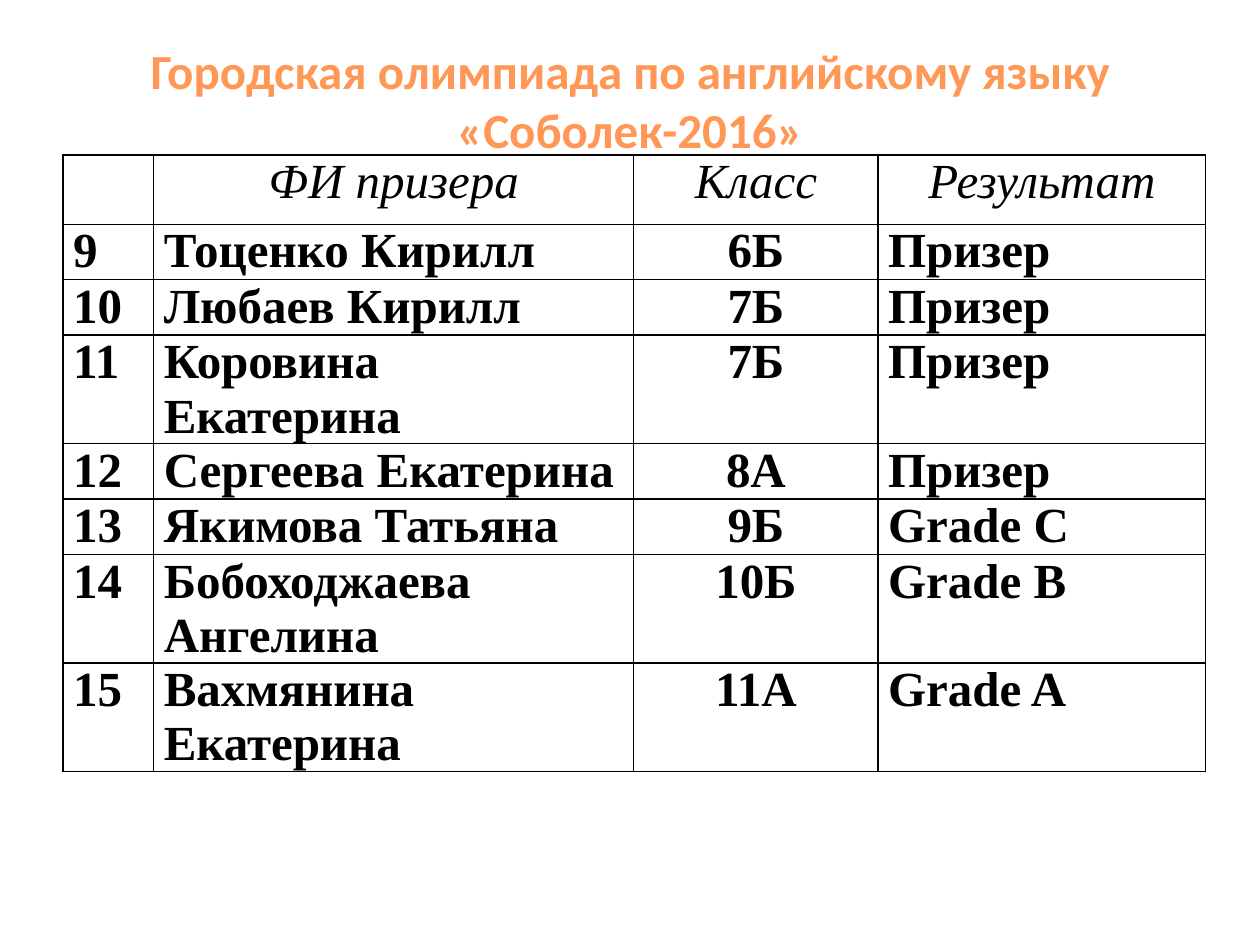
"""Builds the slide with the prize winners of the city English olympiad."""
from lxml.etree import SubElement
from pptx import Presentation
from pptx.dml.color import RGBColor
from pptx.enum.text import MSO_ANCHOR, MSO_AUTO_SIZE, PP_ALIGN
from pptx.oxml.ns import qn
from pptx.util import Inches, Pt

COLORS = {"title": "FF9856", "text": "000000", "border": "000000"}
FONTS = {"title": "Calibri", "table": "Times New Roman"}
TEXT_SIZE = 28

COLUMN_WIDTHS = [0.72, 3.81, 1.94, 2.6]
ROW_HEIGHTS = [0.55, 0.44, 0.44, 0.86, 0.44, 0.44, 0.86, 0.86]
HEADER = ["", "ФИ призера", "Класс", "Результат"]
WINNERS = [
    ("Тоценко Кирилл", "6Б", "Призер"),
    ("Любаев Кирилл", "7Б", "Призер"),
    ("Коровина Екатерина", "7Б", "Призер"),
    ("Сергеева Екатерина", "8А", "Призер"),
    ("Якимова Татьяна", "9Б", "Grade C"),
    ("Бобоходжаева Ангелина", "10Б", "Grade B"),
    ("Вахмянина Екатерина", "11А", "Grade A"),
]
FIRST_NUMBER = 9
CLASS_COLUMN = 2


def set_values(target, values):
    for name, value in values.items():
        setattr(target, name, value)


class SlideBuilder:
    def __init__(self, presentation):
        self.slide = presentation.slides.add_slide(presentation.slide_layouts[5])

    def format_paragraph(self, paragraph, alignment, color, **font_values):
        paragraph.alignment = alignment
        set_values(paragraph.font, {"size": Pt(TEXT_SIZE), **font_values})
        paragraph.font.color.rgb = RGBColor.from_string(COLORS[color])

    def add_title(self, text, left, top, width, height):
        title = self.slide.shapes.title
        set_values(title, {"left": Inches(left), "top": Inches(top),
                           "width": Inches(width), "height": Inches(height)})
        frame = title.text_frame
        frame.text = text
        set_values(frame, {"word_wrap": True, "auto_size": MSO_AUTO_SIZE.NONE,
                           "vertical_anchor": MSO_ANCHOR.MIDDLE,
                           "margin_top": Inches(0.26), "margin_bottom": Inches(0.05)})
        self.format_paragraph(frame.paragraphs[0], PP_ALIGN.CENTER, "title",
                              name=FONTS["title"], bold=True)

    def add_borders(self, cell):
        properties = cell._tc.get_or_add_tcPr()
        for side in ("a:lnL", "a:lnR", "a:lnT", "a:lnB"):
            line = SubElement(properties, qn(side), w=str(Pt(1)))
            fill = SubElement(line, qn("a:solidFill"))
            SubElement(fill, qn("a:srgbClr"), val=COLORS["border"])

    def fill_cell(self, cell, text, alignment, **font_values):
        cell.text = text
        set_values(cell, {"margin_left": Inches(0.08), "margin_right": Inches(0.08),
                          "margin_top": 0, "margin_bottom": 0,
                          "vertical_anchor": MSO_ANCHOR.TOP})
        self.add_borders(cell)
        cell.fill.background()
        self.format_paragraph(cell.text_frame.paragraphs[0], alignment, "text",
                              name=FONTS["table"], **font_values)

    def add_table(self, rows, left, top):
        table = self.slide.shapes.add_table(
            len(rows), len(COLUMN_WIDTHS), Inches(left), Inches(top),
            Inches(sum(COLUMN_WIDTHS)), Inches(sum(ROW_HEIGHTS))).table
        set_values(table, {"first_row": False, "horz_banding": False})
        for column, width in zip(table.columns, COLUMN_WIDTHS):
            column.width = Inches(width)
        for row, height in zip(table.rows, ROW_HEIGHTS):
            row.height = Inches(height)
        for row_index, values in enumerate(rows):
            is_header = row_index == 0
            for column_index, text in enumerate(values):
                centered = is_header or column_index == CLASS_COLUMN
                alignment = PP_ALIGN.CENTER if centered else PP_ALIGN.JUSTIFY
                self.fill_cell(table.cell(row_index, column_index), text, alignment,
                               bold=not is_header, italic=is_header)


def main():
    presentation = Presentation()
    set_values(presentation, {"slide_width": Inches(10), "slide_height": Inches(7.5)})
    builder = SlideBuilder(presentation)
    builder.add_title("Городская олимпиада по английскому языку «Соболек-2016»",
                      0.5, 0.3, 9, 0.77)
    numbered = [(str(number), *winner)
                for number, winner in enumerate(WINNERS, FIRST_NUMBER)]
    builder.add_table([HEADER, *numbered], 0.5, 1.23)
    presentation.save("out.pptx")


if __name__ == "__main__":
    main()
